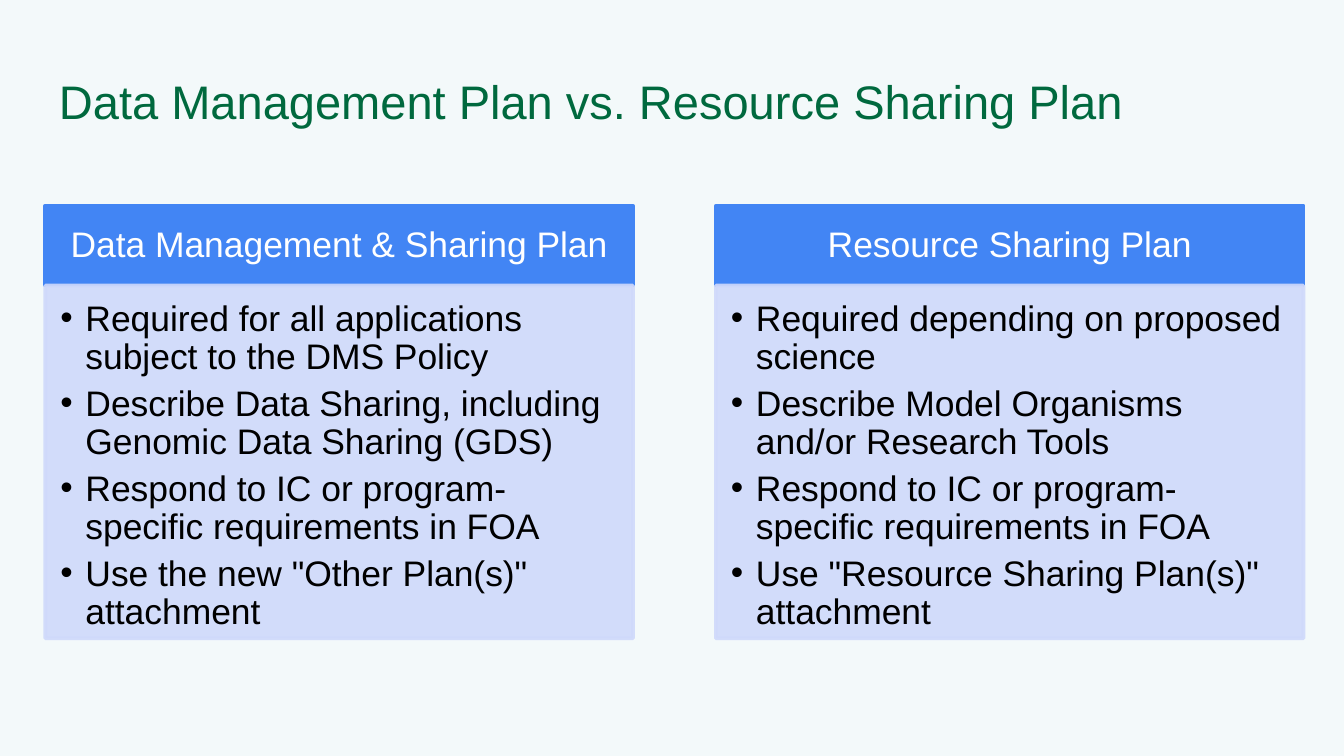
"""Build a slide comparing a data management plan with a resource sharing plan."""
from lxml import etree
from pptx import Presentation
from pptx.dml.color import RGBColor
from pptx.enum import shapes, text
from pptx.oxml import ns
from pptx.util import Pt


def paint(fill, color, alpha=None):
    fill.solid()
    fill.fore_color.rgb = RGBColor.from_string(color)
    if alpha:
        clr = fill._xPr.find(ns.qn("a:solidFill"))[0]
        etree.SubElement(clr, ns.qn("a:alpha"), val=str(alpha * 1000))


def write(tf, lines, margins, anchor, size, color, fmt, bullet=False):
    tf.word_wrap = True
    tf.vertical_anchor = anchor
    for side, m in zip(("left", "top", "right", "bottom"), margins):
        setattr(tf, f"margin_{side}", Pt(m))
    for i, line in enumerate(lines):
        p = tf.add_paragraph() if i else tf.paragraphs[0]
        for name, value in fmt.items():
            setattr(p, name, value)
        if bullet:
            pPr = p._p.get_or_add_pPr()
            pPr.set("marL", str(Pt(13.5)))
            pPr.set("indent", str(Pt(-13.5)))
            clr = etree.SubElement(pPr, ns.qn("a:buClr"))
            etree.SubElement(clr, ns.qn("a:srgbClr"), val=color)
            etree.SubElement(pPr, ns.qn("a:buFont"), typeface="Arial")
            etree.SubElement(pPr, ns.qn("a:buChar"), char="•")
        r = p.add_run()
        r.text = line
        for name, value in {"name": "Arial", "size": Pt(size)}.items():
            setattr(r.font, name, value)
        paint(r.font.fill, color)


prs = Presentation()
prs.slide_width, prs.slide_height = Pt(720), Pt(405)
s = prs.slides.add_slide(prs.slide_layouts[6])
paint(s.background.fill, "F3F9FA")

ANCHOR, ALIGN = text.MSO_ANCHOR, text.PP_ALIGN
title = s.shapes.add_textbox(Pt(24.5), Pt(31.7), Pt(671), Pt(45.4))
write(title.text_frame, ["Data Management Plan vs. Resource Sharing Plan"],
      (7.2,) * 4, ANCHOR.TOP, 25.2, "00693E", {"alignment": ALIGN.LEFT})

plans = {
    "Data Management & Sharing Plan": [
        "Required for all applications subject to the DMS Policy",
        "Describe Data Sharing, including Genomic Data Sharing (GDS)",
        "Respond to IC or program-specific requirements in FOA",
        'Use the new "Other Plan(s)" attachment',
    ],
    "Resource Sharing Plan": [
        "Required depending on proposed science",
        "Describe Model Organisms and/or Research Tools",
        "Respond to IC or program-specific requirements in FOA",
        'Use "Resource Sharing Plan(s)" attachment',
    ],
}
head_fmt = {"alignment": ALIGN.CENTER, "line_spacing": 0.9}
body_fmt = {"alignment": ALIGN.LEFT, "line_spacing": 0.9,
            "space_after": Pt(4.5), "level": 1}

for col, (heading, points) in enumerate(plans.items()):
    x = 24.3 + col * 359.2
    parts = (
        (110.2, 42.8, "4285F4", None, [heading], (10.8, 6, 10.8, 6),
         ANCHOR.MIDDLE, "FFFFFF", head_fmt, False),
        (153, 189, "CFD9FB", 90, points, (8, 8, 10.8, 12),
         ANCHOR.TOP, "000000", body_fmt, True),
    )
    for y, h, fill, alpha, lines, margins, anchor, color, fmt, bullet in parts:
        sp = s.shapes.add_shape(shapes.MSO_SHAPE.RECTANGLE,
                                Pt(x), Pt(y), Pt(314.8), Pt(h))
        sp.shadow.inherit = False
        paint(sp.fill, fill, alpha)
        paint(sp.line.fill, fill, alpha)
        sp.line.width = Pt(2)
        write(sp.text_frame, lines, margins, anchor, 19, color, fmt, bullet)

prs.save("out.pptx")
